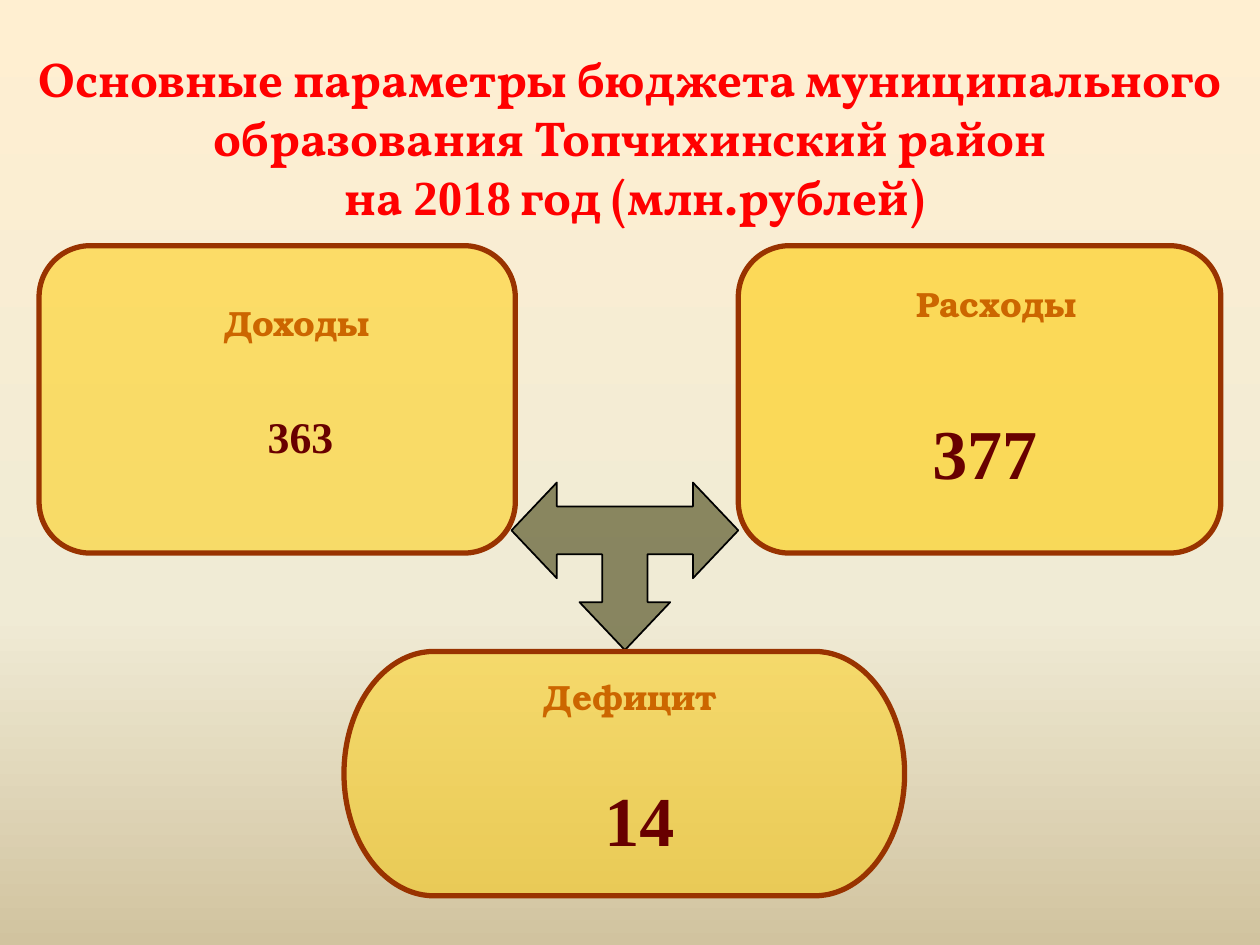
"""Build the slide on the main budget figures of the district for 2018."""
from copy import deepcopy

from lxml.etree import SubElement
from pptx import Presentation
from pptx.dml.color import RGBColor
from pptx.enum.shapes import MSO_SHAPE as Preset
from pptx.enum.text import MSO_ANCHOR as Anchor, PP_ALIGN as Align
from pptx.oxml.ns import qn
from pptx.util import Inches, Pt

COLORS = {
    "title": "FF0000", "card": "FFCC00", "border": "993300", "arrow": "333300",
    "outline": "000000", "label": "CC6600", "amount": "680000",
}
BACKGROUND = [(0, "FFEFD1"), (0.65, "F0EBD5"), (1, "D1C39F")]
TITLE_RUNS = [
    ("Основные параметры бюджета муниципального образования "
     "Топчихинский район\v на ", "Vollkorn"),
    ("2018", "Times New Roman"),
    (" год (млн.рублей)", "Vollkorn"),
]
CARDS = [
    (Preset.ROUNDED_RECTANGLE, (0.31, 1.95, 3.78, 2.44), 51),
    (Preset.ROUNDED_RECTANGLE, (5.86, 1.95, 3.83, 2.44), 58),
    (Preset.FLOWCHART_TERMINATOR, (2.73, 5.17, 4.45, 1.94), 48),
]
ARROW_ORIGIN = (4.06, 3.83)
ARROW_UNIT = (0.18, 0.19)
ARROW_GRID = [
    (5, 7), (7, 5), (6, 5), (6, 3), (8, 3), (8, 4), (10, 2), (8, 0), (8, 1),
    (2, 1), (2, 0), (0, 2), (2, 4), (2, 3), (4, 3), (4, 5), (3, 5),
]
LABEL = {"name": "TeX Gyre Bonum", "size": Pt(20), "bold": True}
AMOUNT = {"name": "Times New Roman", "size": Pt(40), "bold": True}
CAPTIONS = [
    ("Доходы", (1.02, 2.34, 2.67, 0.63), LABEL, "label"),
    ("Дефицит", (3.67, 5.31, 2.67, 0.71), LABEL, "label"),
    ("Расходы", (6.41, 2.19, 2.99, 0.63), LABEL, "label"),
    ("363", (1.41, 3.2, 1.95, 0.94), {**AMOUNT, "size": Pt(25)}, "amount"),
    ("14", (4.29, 6.11, 1.57, 0.92), AMOUNT, "amount"),
    ("377", (6.72, 3.2, 2.19, 0.94), AMOUNT, "amount"),
]


def inches(lengths):
    """Turn a sequence of inch values into lengths."""
    return [Inches(length) for length in lengths]


def rgb(role):
    """Give the colour of a role."""
    return RGBColor.from_string(COLORS[role])


def set_font(font, values, role):
    """Apply format values and a colour to a font."""
    for attribute, value in values.items():
        setattr(font, attribute, value)
    font.color.rgb = rgb(role)


def paint_background(slide):
    """Fill the background with a three-stop gradient running down."""
    fill = slide.background.fill
    fill.gradient()
    fill.gradient_angle = 270
    stop_list = slide.element.find(".//" + qn("a:gsLst"))
    stop_list.append(deepcopy(stop_list[-1]))
    for stop, (position, color) in zip(fill.gradient_stops, BACKGROUND):
        stop.position = position
        stop.color.rgb = RGBColor.from_string(color)


def paint(shape, fill_role, opacity, line_role, line_width):
    """Give a shape a translucent fill and a solid line."""
    shape.shadow.inherit = False
    shape.fill.solid()
    shape.fill.fore_color.rgb = rgb(fill_role)
    tint = shape.element.spPr.find(qn("a:solidFill"))[0]
    SubElement(tint, qn("a:alpha")).set("val", str(opacity * 1000))
    shape.line.color.rgb = rgb(line_role)
    shape.line.width = Pt(line_width)


def write_title(title):
    """Place the title placeholder and fill in its runs."""
    title.left, title.top, title.width, title.height = inches((0, 0.55, 10, 1.07))
    title.text_frame.vertical_anchor = Anchor.MIDDLE
    paragraph = title.text_frame.paragraphs[0]
    paragraph.alignment = Align.CENTER
    for words, typeface in TITLE_RUNS:
        for index, line in enumerate(words.split("\v")):
            if index:
                paragraph.add_line_break()
            run = paragraph.add_run()
            run.text = line
            set_font(run.font, {"name": typeface, "size": Pt(28), "bold": True}, "title")


def add_card(shapes, preset, place, opacity):
    """Add one yellow budget card."""
    card = shapes.add_shape(preset, *inches(place))
    paint(card, "card", opacity, "border", 3)


def add_three_way_arrow(shapes):
    """Add the arrow that links the three cards."""
    start, *corners = ARROW_GRID
    builder = shapes.build_freeform(*start, scale=tuple(inches(ARROW_UNIT)))
    builder.add_line_segments(corners, close=True)
    arrow = builder.convert_to_shape(*inches(ARROW_ORIGIN))
    paint(arrow, "arrow", 55, "outline", 1)


def add_caption(shapes, words, place, values, role):
    """Add a centred label or amount."""
    frame = shapes.add_textbox(*inches(place)).text_frame
    frame.word_wrap = False
    paragraph = frame.paragraphs[0]
    paragraph.alignment = Align.CENTER
    run = paragraph.add_run()
    run.text = words
    set_font(run.font, values, role)


def main():
    """Build and save the slide."""
    deck = Presentation()
    deck.slide_width, deck.slide_height = inches((10, 7.5))
    slide = deck.slides.add_slide(deck.slide_layouts.get_by_name("Title Only"))
    paint_background(slide)
    write_title(slide.shapes.title)
    *upper_cards, deficit_card = CARDS
    for card in upper_cards:
        add_card(slide.shapes, *card)
    add_three_way_arrow(slide.shapes)
    add_card(slide.shapes, *deficit_card)
    for caption in CAPTIONS:
        add_caption(slide.shapes, *caption)
    deck.save("out.pptx")


if __name__ == "__main__":
    main()
